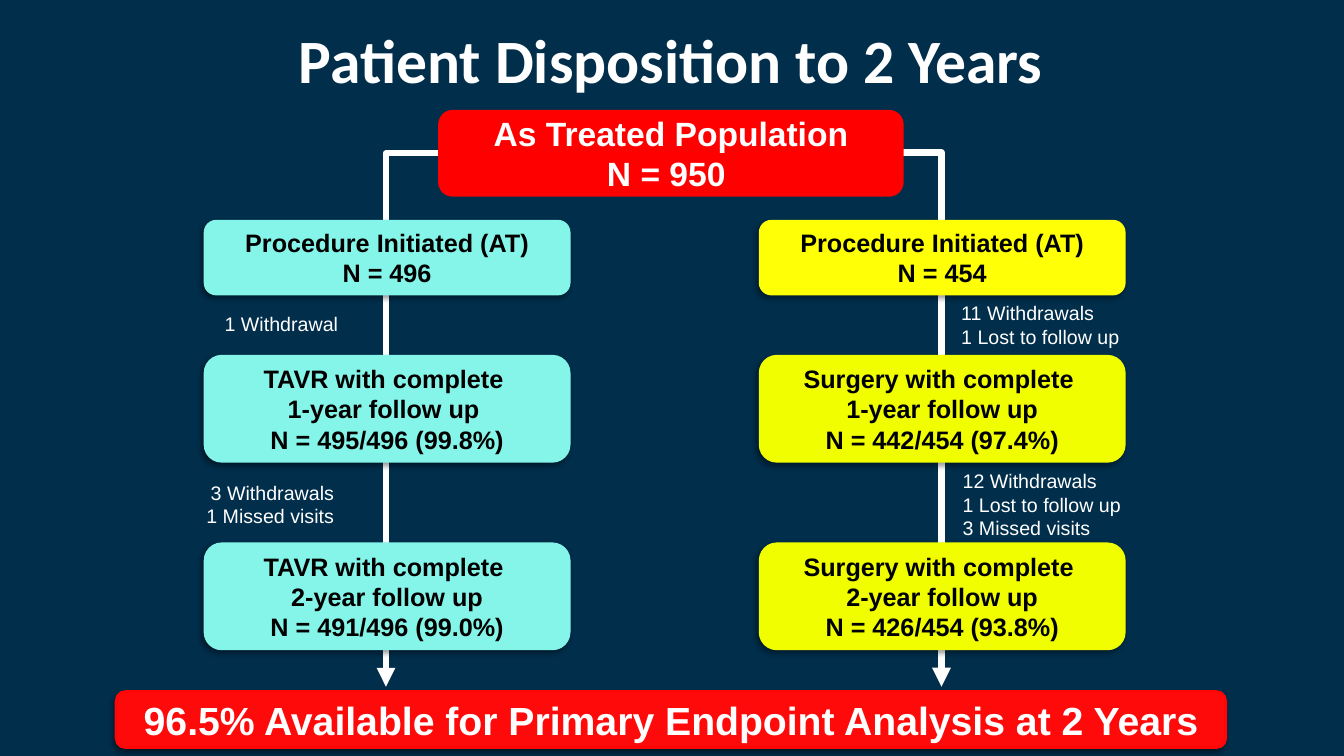
"""Build the patient disposition flow chart slide."""
import pptx
import pptx.util
import pptx.dml.color
import pptx.enum.shapes
import pptx.enum.text
import pptx.oxml
import pptx.oxml.ns
import pptx.oxml.xmlchemy

Pt = pptx.util.Pt
RGBColor = pptx.dml.color.RGBColor
Kind = pptx.enum.shapes.MSO_SHAPE
Align = pptx.enum.text.PP_ALIGN
Anchor = pptx.enum.text.MSO_ANCHOR
qn = pptx.oxml.ns.qn
OxmlElement = pptx.oxml.xmlchemy.OxmlElement

NAVY = RGBColor(0x00, 0x2E, 0x4B)
WHITE = RGBColor(0xFF, 0xFF, 0xFF)
BLACK = RGBColor(0x00, 0x00, 0x00)
RED = RGBColor(0xFF, 0x00, 0x00)
BANNER_RED = RGBColor(0xFF, 0x0A, 0x0A)
BANNER_EDGE = RGBColor(0xFF, 0x05, 0x05)
AQUA = RGBColor(0x85, 0xF5, 0xE9)
YELLOW = RGBColor(0xFF, 0xFF, 0x05)
LIME = RGBColor(0xF1, 0xFE, 0x00)

TITLE = "Patient Disposition to 2 Years"
POPULATION = ["As Treated Population", "N = 950 "]
BANNER = ["96.5% Available for Primary Endpoint Analysis at 2 Years"]
ARMS = [
    {
        "left": 145.5,
        "colors": [AQUA, AQUA, AQUA],
        "stages": [
            ["Procedure Initiated (AT)", "N = 496"],
            ["TAVR with complete ", "1-year follow up ", "N = 495/496 (99.8%)"],
            ["TAVR with complete ", "2-year follow up", "N = 491/496 (99.0%)"],
        ],
        "arrow": [(332, 109.5), (275.75, 490.5)],
        "note_align": Align.RIGHT,
        "notes": [
            (["1 Withdrawal"], (60.5, 218, 189.5, 26.5)),
            (["3 Withdrawals", "1 Missed visits"], (58.5, 337.5, 189.5, 45.5)),
        ],
    },
    {
        "left": 542,
        "colors": [YELLOW, LIME, LIME],
        "stages": [
            ["Procedure Initiated (AT)", "N = 454"],
            ["Surgery with complete ", "1-year follow up", "N = 442/454 (97.4%)"],
            ["Surgery with complete ", "2-year follow up", "N = 426/454 (93.8%)"],
        ],
        "arrow": [(589.5, 109), (672.5, 490.5)],
        "note_align": Align.LEFT,
        "notes": [
            (["11 Withdrawals", "1 Lost to follow up"], (679.5, 211.5, 214.5, 41)),
            (["12 Withdrawals", "1 Lost to follow up", "3 Missed visits"],
             (680.5, 331.5, 214.5, 58)),
        ],
    },
]
STAGE_ROWS = [(157, 54), (253.5, 77), (387.5, 77)]
STAGE_WIDTH = 262

SHADOW = (
    '<a:effectLst xmlns:a="http://schemas.openxmlformats.org/drawingml/2006/main">'
    '<a:outerShdw blurRad="50800" dist="38100" dir="8100000" algn="tr" rotWithShape="0">'
    '<a:srgbClr val="000000"><a:alpha val="40000"/></a:srgbClr>'
    '</a:outerShdw></a:effectLst>'
)


def write(shape, lines, size=18, color=WHITE, bold=True, font="Arial",
          align=Align.CENTER, anchor=Anchor.MIDDLE, spacing=None, after=None):
    """Fill a shape with one formatted paragraph per line."""
    frame = shape.text_frame
    frame.word_wrap = True
    frame.vertical_anchor = anchor
    for index, line in enumerate(lines):
        para = frame.add_paragraph() if index else frame.paragraphs[0]
        para.alignment = align
        if spacing:
            para.line_spacing = spacing
        if after:
            para.space_after = Pt(after)
        span = para.add_run()
        span.text = line
        span.font.name = font
        span.font.size = Pt(size)
        span.font.bold = bold
        span.font.color.rgb = color


def add_box(page, place, fill=None, edge=None, shadow=False):
    """Add a rounded box, optionally filled, outlined and shadowed."""
    box = page.shapes.add_shape(Kind.ROUNDED_RECTANGLE, *map(Pt, place))
    if fill is None:
        box.fill.background()
    else:
        box.fill.solid()
        box.fill.fore_color.rgb = fill
    if edge is None:
        box.line.fill.background()
    else:
        box.line.color.rgb = edge
        box.line.width = Pt(2)
    if shadow:
        box._element.spPr.append(pptx.oxml.parse_xml(SHADOW))
    else:
        box.shadow.inherit = False
    return box


def add_elbow_arrow(page, start, end):
    """Add a white arrow that runs sideways and then down."""
    arrow = page.shapes.add_connector(
        pptx.enum.shapes.MSO_CONNECTOR.ELBOW, *map(Pt, start + end))
    arrow.line.color.rgb = WHITE
    arrow.line.width = Pt(4.5)
    properties = arrow._element.spPr
    properties.find(qn("a:prstGeom")).set("prst", "bentConnector2")
    head = OxmlElement("a:tailEnd")
    head.set("type", "triangle")
    properties.find(qn("a:ln")).append(head)
    properties.append(OxmlElement("a:effectLst"))


def add_arm(page, arm):
    """Add the stage boxes and dropout notes of one treatment arm."""
    for lines, color, (top, height) in zip(arm["stages"], arm["colors"], STAGE_ROWS):
        box = add_box(page, (arm["left"], top, STAGE_WIDTH, height), color, shadow=True)
        write(box, lines, color=BLACK)
    for lines, place in arm["notes"]:
        if arm["note_align"] == Align.RIGHT:
            note = add_box(page, place)
        else:
            note = page.shapes.add_textbox(*map(Pt, place))
        write(note, lines, size=14, bold=False, align=arm["note_align"], anchor=Anchor.TOP)


def main():
    """Create the deck and save it."""
    deck = pptx.Presentation()
    deck.slide_width, deck.slide_height = Pt(960), Pt(540)
    page = deck.slides.add_slide(deck.slide_layouts[5])
    page.background.fill.solid()
    page.background.fill.fore_color.rgb = NAVY

    title = page.shapes.title
    title.left, title.top, title.width, title.height = map(Pt, (0, 12, 959, 60))
    frame = title.text_frame
    frame.auto_size = pptx.enum.text.MSO_AUTO_SIZE.NONE
    frame.margin_left = frame.margin_right = Pt(3.6)
    frame.margin_top = frame.margin_bottom = Pt(3.6)
    write(title, [TITLE], size=44, font="Calibri")

    for arm in ARMS:
        add_elbow_arrow(page, *arm["arrow"])
    write(add_box(page, (313, 78.5, 332.5, 62), RED), POPULATION, size=24)
    for arm in ARMS:
        add_arm(page, arm)
    banner = add_box(page, (83, 494, 792.5, 40), BANNER_RED, BANNER_EDGE, shadow=True)
    write(banner, BANNER, size=28, anchor=Anchor.BOTTOM, spacing=0.5, after=8)
    deck.save("out.pptx")


if __name__ == "__main__":
    main()
